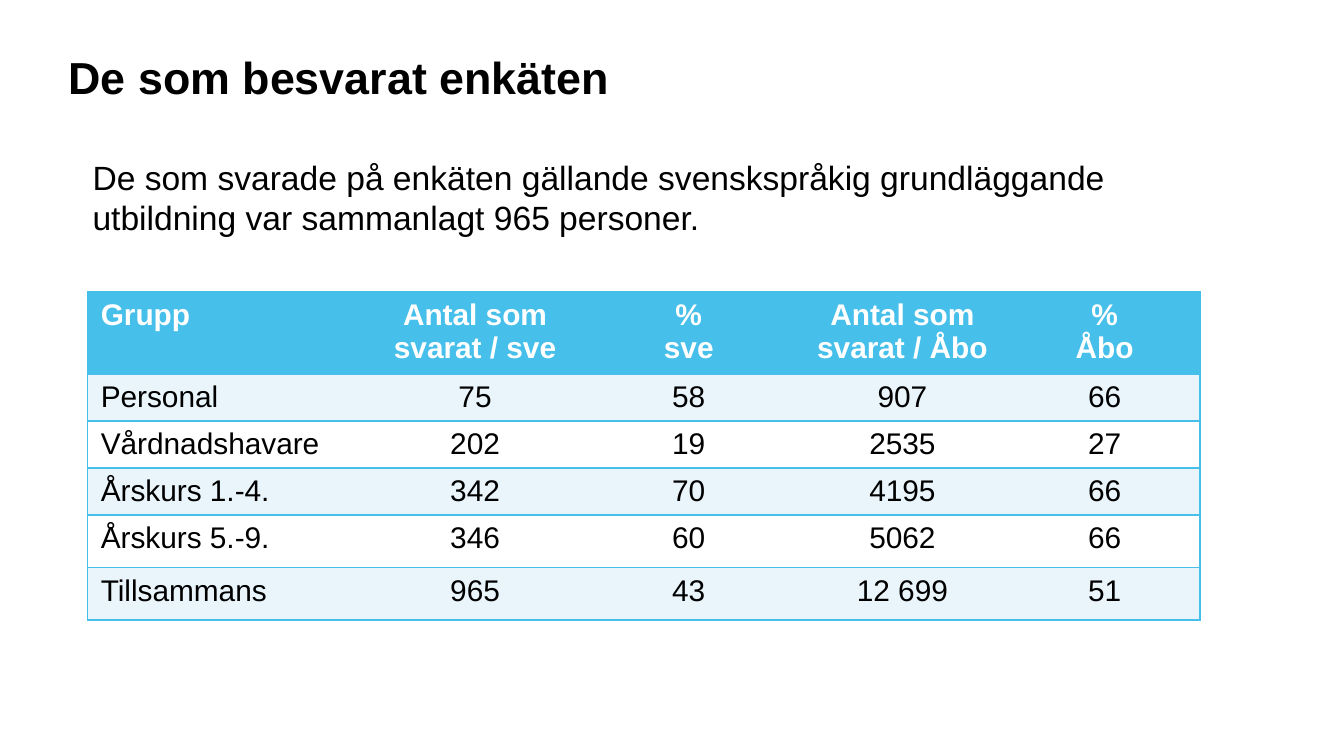
from lxml import etree
from pptx import Presentation
from pptx.dml.color import RGBColor
from pptx.enum.text import MSO_ANCHOR as Anchor, PP_ALIGN as Align
from pptx.oxml.ns import qn
from pptx.util import Inches, Pt

BLUE, PALE, WHITE, BLACK = "46BFEA", "E9F4FB", "FFFFFF", "000000"


def style(par, size, tone, bold=False, align=Align.LEFT):
    par.alignment = align
    for run in par.runs:
        font = run.font
        font.name, font.size, font.bold = "Arial", Pt(size), bold
        font.color.rgb = RGBColor.from_string(tone)


def edge(cell, side, tone):
    """Draw one cell border, or hide it when tone is None."""
    line = etree.SubElement(cell._tc.get_or_add_tcPr(), qn(f"a:ln{side}"), w=str(Pt(1)))
    if tone:
        fill = etree.SubElement(line, qn("a:solidFill"))
        etree.SubElement(fill, qn("a:srgbClr"), val=tone)
    else:
        etree.SubElement(line, qn("a:noFill"))


deck = Presentation()
deck.slide_width, deck.slide_height = Inches(10), Inches(10 * 9 / 16)
slide = deck.slides.add_slide(deck.slide_layouts[5])

# Title
title = slide.shapes.title
title.left, title.top = Inches(0.51), Inches(0.15)
title.width, title.height = Inches(8.95), Inches(0.78)
frame = title.text_frame
frame.text = "De som besvarat enkäten"
frame.vertical_anchor = Anchor.MIDDLE
frame.margin_left = frame.margin_top = frame.margin_bottom = 0
frame.paragraphs[0].line_spacing = Pt(33)
style(frame.paragraphs[0], 24, BLACK, bold=True)

# Lead text
lead = slide.shapes.add_textbox(Inches(0.59), Inches(1.13), Inches(8.49), Inches(0.85))
frame = lead.text_frame
frame.word_wrap = True
frame.text = ("De som svarade på enkäten gällande svenskspråkig grundläggande "
              "utbildning var sammanlagt 965 personer.")
par = frame.paragraphs[0]
par.line_spacing, par.space_after = Pt(21), Pt(12)
style(par, 18, BLACK)

# Table of groups
rows = [
    ("Grupp", "Antal som svarat / sve", "%\nsve", "Antal som svarat / Åbo", "%\nÅbo"),
    ("Personal", "75", "58", "907", "66"),
    ("Vårdnadshavare", "202", "19", "2535", "27"),
    ("Årskurs 1.-4.", "342", "70", "4195", "66"),
    ("Årskurs 5.-9.", "346", "60", "5062", "66"),
    ("Tillsammans", "965", "43", "12 699", "51"),
]
wide = [2.09, 1.59, 1.59, 1.59, 1.42]
high = [0.6] + [0.35] * 3 + [0.39] * 2
table = slide.shapes.add_table(
    len(rows), len(wide), Inches(0.65), Inches(2.17),
    Inches(sum(wide)), Inches(sum(high))).table
for col, width in zip(table.columns, wide):
    col.width = Inches(width)
for row, height in zip(table.rows, high):
    row.height = Inches(height)

last = len(wide) - 1
for r, row in enumerate(rows):
    head = r == 0
    back = BLUE if head else PALE if r % 2 else WHITE
    for c, text in enumerate(row):
        cell = table.cell(r, c)
        cell.text = text
        cell.margin_top, cell.margin_bottom = Inches(0.05), Inches(0.03)
        for par in cell.text_frame.paragraphs:
            style(par, 16, WHITE if head else BLACK, head,
                  Align.CENTER if c else Align.LEFT)
        edge(cell, "L", None if c else BLUE)
        edge(cell, "R", BLUE if c == last else None)
        edge(cell, "T", BLUE)
        edge(cell, "B", BLUE)
        cell.fill.solid()
        cell.fill.fore_color.rgb = RGBColor.from_string(back)

deck.save("out.pptx")
